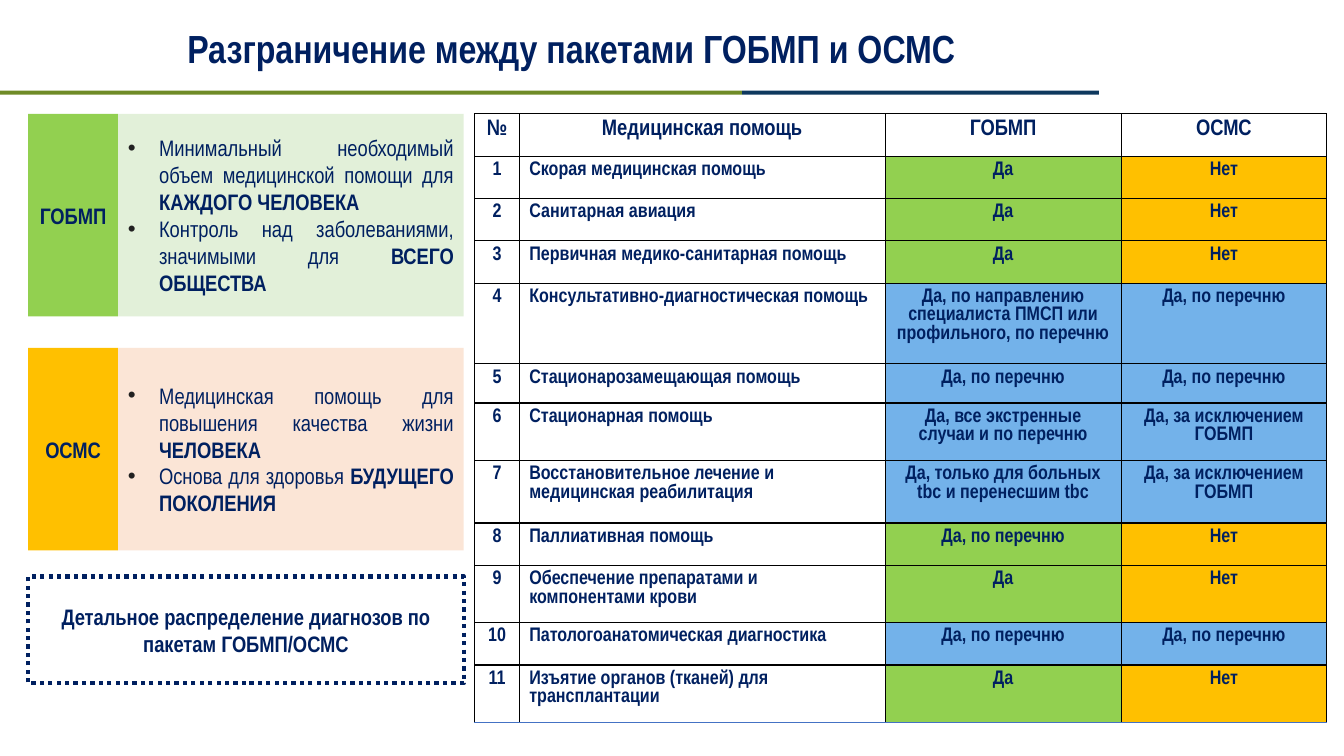
"""Build the slide that compares the ГОБМП and ОСМС care packages."""
from dataclasses import dataclass

from lxml import etree
from pptx import Presentation
from pptx import util as u
from pptx.dml.color import RGBColor
from pptx.enum import dml, shapes, text
from pptx.oxml import ns


@dataclass(frozen=True)
class Theme:
    font: str = "Arial Narrow"
    navy: str = "002060"
    olive: str = "6F8B27"
    bar_navy: str = "0E385E"
    white: str = "FFFFFF"
    black: str = "000000"
    green: str = "92D050"
    pale_green: str = "E2F0D9"
    amber: str = "FFC000"
    pale_orange: str = "FBE5D6"
    sky: str = "73B2EA"
    edge_blue: str = "4472C4"
    bullet: str = "212121"
    title_size: int = 28
    body_size: int = 16
    cell_size: int = 14


@dataclass(frozen=True)
class Box:
    left: float
    top: float
    width: float
    height: float

    def lengths(self) -> tuple:
        return tuple(u.Inches(v) for v in (self.left, self.top, self.width, self.height))


@dataclass(frozen=True)
class Package:
    name: str
    top: float
    color: str
    pale: str
    points: tuple


@dataclass(frozen=True)
class CareRow:
    care: str
    basic: str
    insured: str
    height: float
    basic_color: str
    insured_color: str


THEME = Theme()
YES_NO = (THEME.green, THEME.amber)
SHARED = (THEME.sky, THEME.sky)
LISTED = "Да, по перечню"

PACKAGES = (
    Package("ГОБМП", 1.13, THEME.green, THEME.pale_green, (
        ("Минимальный необходимый объем медицинской помощи для ", "КАЖДОГО ЧЕЛОВЕКА"),
        ("Контроль над заболеваниями, значимыми для ", "ВСЕГО ОБЩЕСТВА"))),
    Package("ОСМС", 3.45, THEME.amber, THEME.pale_orange, (
        ("Медицинская помощь для повышения качества жизни ", "ЧЕЛОВЕКА"),
        ("Основа для здоровья ", "БУДУЩЕГО ПОКОЛЕНИЯ"))),
)

HEADERS = ("№", "Медицинская помощь", "ГОБМП", "ОСМС")
COLUMN_WIDTHS = (0.44, 3.63, 2.34, 2.04)
HEADER_HEIGHT = 0.42
CARE_ROWS = (
    CareRow("Скорая медицинская помощь", "Да", "Нет", 0.42, *YES_NO),
    CareRow("Санитарная авиация", "Да", "Нет", 0.42, *YES_NO),
    CareRow("Первичная медико-санитарная помощь", "Да", "Нет", 0.42, *YES_NO),
    CareRow("Консультативно-диагностическая помощь",
            "Да, по направлению специалиста ПМСП или профильного, по перечню",
            LISTED, 0.8, *SHARED),
    CareRow("Стационарозамещающая помощь", LISTED, LISTED, 0.39, *SHARED),
    CareRow("Стационарная помощь", "Да, все экстренные случаи и по перечню",
            "Да, за исключением ГОБМП", 0.57, *SHARED),
    CareRow("Восстановительное лечение и медицинская реабилитация",
            "Да, только для больных tbc и перенесшим tbc",
            "Да, за исключением ГОБМП", 0.62, *SHARED),
    CareRow("Паллиативная помощь", LISTED, "Нет", 0.42, *YES_NO),
    CareRow("Обеспечение препаратами и компонентами крови", "Да", "Нет", 0.57, *YES_NO),
    CareRow("Патологоанатомическая диагностика", LISTED, LISTED, 0.42, *SHARED),
    CareRow("Изъятие органов (тканей) для трансплантации", "Да", "Нет", 0.57, *YES_NO),
)


def style_span(span, size: int, bold: bool = True) -> None:
    span.font.name = THEME.font
    span.font.size = u.Pt(size)
    span.font.bold = bold
    span.font.color.rgb = RGBColor.from_string(THEME.navy)


def write(frame, words: str, size: int, align=text.PP_ALIGN.CENTER) -> None:
    frame.text = words
    para = frame.paragraphs[0]
    para.alignment = align
    for span in para.runs:
        style_span(span, size)


def add_rect(page, box: Box, fill: str | None):
    rect = page.shapes.add_shape(shapes.MSO_SHAPE.RECTANGLE, *box.lengths())
    rect.shadow.inherit = False
    rect.line.fill.background()
    if fill:
        rect.fill.solid()
        rect.fill.fore_color.rgb = RGBColor.from_string(fill)
    else:
        rect.fill.background()
    rect.text_frame.word_wrap = True
    rect.text_frame.vertical_anchor = text.MSO_ANCHOR.MIDDLE
    return rect


def add_bullet(para) -> None:
    props = para._p.get_or_add_pPr()
    props.set("marL", str(u.Inches(0.31)))
    props.set("indent", str(u.Inches(-0.31)))
    color = etree.SubElement(props, ns.qn("a:buClr"))
    etree.SubElement(color, ns.qn("a:srgbClr"), val=THEME.bullet)
    etree.SubElement(props, ns.qn("a:buFont"), typeface="Arial")
    etree.SubElement(props, ns.qn("a:buChar"), char="•")


def add_package(page, package: Package) -> None:
    panel = add_rect(page, Box(1.17, package.top, 3.43, 2.01), package.pale)
    frame = panel.text_frame
    for index, (lead, stress) in enumerate(package.points):
        para = frame.add_paragraph() if index else frame.paragraphs[0]
        para.alignment = text.PP_ALIGN.JUSTIFY
        add_bullet(para)
        for words, bold in ((lead, False), (stress, True)):
            span = para.add_run()
            span.text = words
            style_span(span, THEME.body_size, bold)
    label = add_rect(page, Box(0.28, package.top, 0.89, 2.01), package.color)
    write(label.text_frame, package.name, THEME.body_size)


def set_borders(cell, bottom: str) -> None:
    props = cell._tc.get_or_add_tcPr()
    sides = {"a:lnL": THEME.black, "a:lnR": THEME.black, "a:lnT": THEME.black, "a:lnB": bottom}
    for index, (tag, color) in enumerate(sides.items()):
        line = etree.Element(ns.qn(tag), w=str(u.Pt(1)))
        fill = etree.SubElement(line, ns.qn("a:solidFill"))
        etree.SubElement(fill, ns.qn("a:srgbClr"), val=color)
        props.insert(index, line)


def fill_cell(cell, words: str, size: int, fill: str, align, bottom: str) -> None:
    write(cell.text_frame, words, size, align)
    cell.fill.solid()
    cell.fill.fore_color.rgb = RGBColor.from_string(fill)
    set_borders(cell, bottom)


def add_care_table(page) -> None:
    heights = (HEADER_HEIGHT, *(row.height for row in CARE_ROWS))
    box = Box(4.71, 1.13, sum(COLUMN_WIDTHS), sum(heights))
    table = page.shapes.add_table(len(heights), len(HEADERS), *box.lengths()).table
    for column, width in zip(table.columns, COLUMN_WIDTHS):
        column.width = u.Inches(width)
    for row, height in zip(table.rows, heights):
        row.height = u.Inches(height)
    center, left = text.PP_ALIGN.CENTER, text.PP_ALIGN.LEFT
    for column, words in enumerate(HEADERS):
        fill_cell(table.cell(0, column), words, THEME.body_size, THEME.white, center, THEME.black)
    for number, row in enumerate(CARE_ROWS, 1):
        bottom = THEME.edge_blue if number == len(CARE_ROWS) else THEME.black
        entries = ((str(number), THEME.white, center), (row.care, THEME.white, left),
                   (row.basic, row.basic_color, center), (row.insured, row.insured_color, center))
        for column, (words, fill, align) in enumerate(entries):
            fill_cell(table.cell(number, column), words, THEME.cell_size, fill, align, bottom)


def main() -> None:
    deck = Presentation()
    deck.slide_width, deck.slide_height = u.Inches(13.33), u.Inches(7.5)
    page = deck.slides.add_slide(deck.slide_layouts[5])
    add_rect(page, Box(0, 0.9, 7.36, 0.04), THEME.olive)
    add_rect(page, Box(7.36, 0.9, 3.54, 0.04), THEME.bar_navy)
    title = page.shapes.title
    title.left, title.top, title.width, title.height = Box(0.07, 0.14, 11.19, 0.73).lengths()
    title.text_frame.vertical_anchor = text.MSO_ANCHOR.MIDDLE
    write(title.text_frame, "Разграничение между пакетами ГОБМП и ОСМС", THEME.title_size)
    title.text_frame.paragraphs[0].line_spacing = 0.9
    add_care_table(page)
    for package in PACKAGES:
        add_package(page, package)
    note = add_rect(page, Box(0.28, 5.72, 4.32, 1.06), None)
    note.line.color.rgb = RGBColor.from_string(THEME.navy)
    note.line.width = u.Pt(3)
    note.line.dash_style = dml.MSO_LINE.ROUND_DOT
    write(note.text_frame, "Детальное распределение диагнозов по пакетам ГОБМП/ОСМС", THEME.body_size)
    deck.save("out.pptx")


if __name__ == "__main__":
    main()
